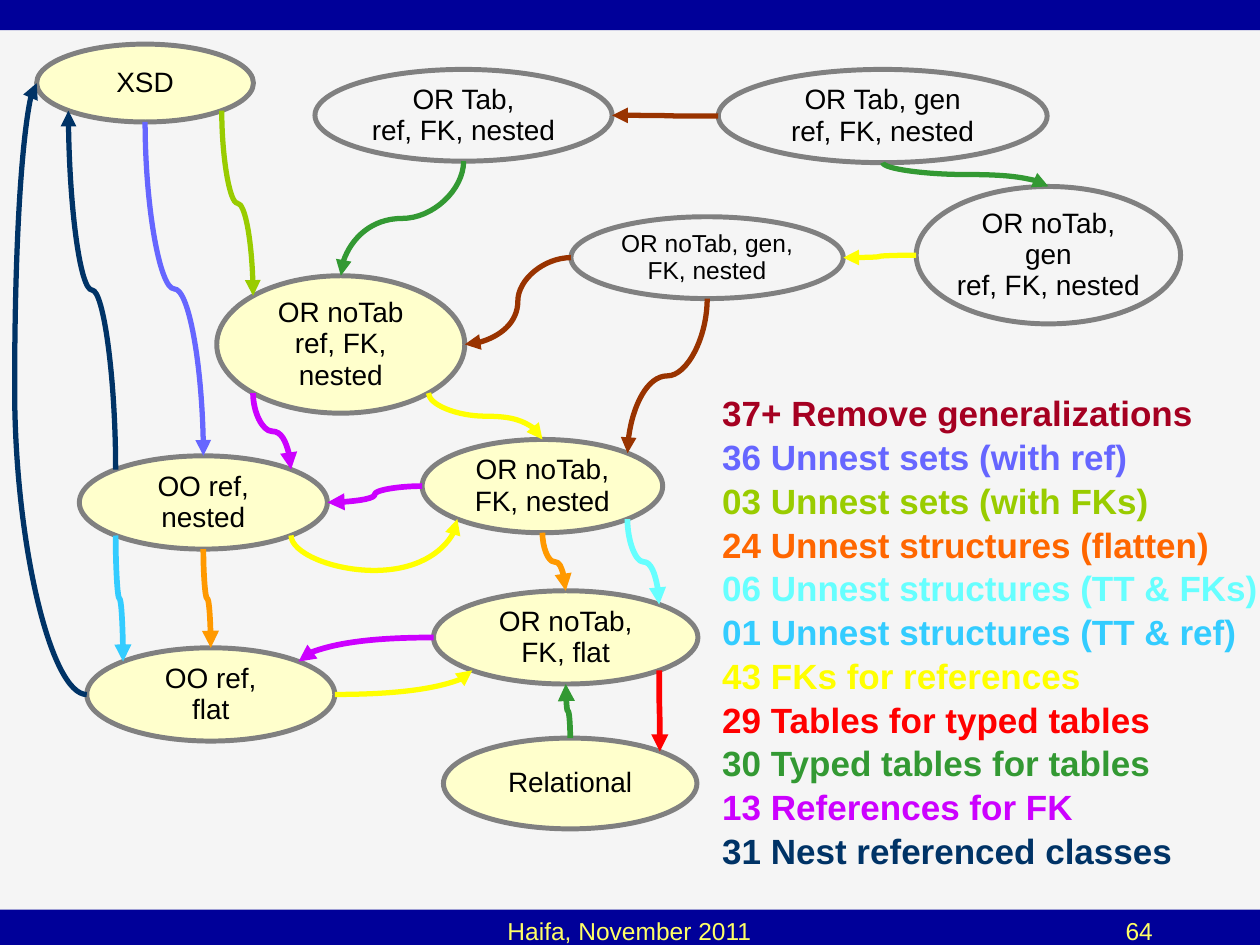
from math import cos, pi, sin

from lxml import etree
from pptx import Presentation
from pptx import util as u
from pptx.dml import color
from pptx.enum import shapes, text
from pptx.oxml import ns

CREAM, GREY, NAVY, PALE = "FFFFCC", "808080", "000099", "FFFF66"
BARS = [(0, 0, 25.4, 0.61), (0, 18.34, 25.4, 0.71)]
FOOTERS = [
    ("Haifa, November 2011", (5.49, 18.34, 14.4, 1.27), text.PP_ALIGN.CENTER),
    ("64", (20.09, 18.34, 3.4, 1.27), text.PP_ALIGN.RIGHT),
]
NODES = {
    "xsd": (["XSD"], (0.74, 0.89, 4.37, 1.57), CREAM, 16),
    "or_ref": (["OR noTab", "ref, FK, nested"], (4.37, 5.56, 5, 2.77), CREAM, 16),
    "relational": (["Relational"], (8.94, 14.88, 5.11, 1.83), CREAM, 16),
    "oo_nested": (["OO ref,", "nested"], (1.6, 9.19, 5, 1.88), CREAM, 16),
    "or_tab": (["OR Tab,", "ref, FK, nested"], (6.35, 1.4, 5.99, 1.85), None, 16),
    "oo_flat": (["OO ref,", "flat"], (1.75, 13.06, 5, 1.88), CREAM, 16),
    "or_nested": (["OR noTab,", "FK, nested"], (8.51, 8.86, 4.85, 1.88), CREAM, 16),
    "or_flat": (["OR noTab,", "FK, flat"], (8.74, 11.91, 5.33, 1.88), CREAM, 16),
    "tab_gen": (["OR Tab, gen", "ref, FK, nested"], (14.48, 1.4, 6.63, 1.88), None, 16),
    "notab_gen": (["OR noTab, gen", "ref, FK, nested"], (18.47, 3.76, 5.33, 2.77), None, 16),
    "fk_gen": (["OR noTab, gen, FK, nested"], (11.51, 4.37, 5.49, 1.65), None, 14),
}
SITES = ["top", "top left", "left", "bottom left", "bottom", "bottom right", "right", "top right"]
LINKS = [
    ("oo_nested", "top", "xsd", "bottom", "6666FF", 3, "head", None),
    ("oo_nested", "bottom", "oo_flat", "top", "FF9900", 3.25, "tail", None),
    ("or_ref", "top", "or_tab", "bottom", "339933", 3, "head", None),
    ("or_flat", "bottom right", "relational", "top right", "FF0000", 3.25, "tail", None),
    ("relational", "top", "or_flat", "bottom", "339933", 3.25, "tail", None),
    ("or_ref", "bottom left", "oo_nested", "top right", "CC00FF", 3.25, "tail", None),
    ("xsd", "bottom left", "oo_nested", "top left", "003366", 3, "head", None),
    ("or_ref", "bottom right", "or_nested", "top", "FFFF00", 3, "tail", None),
    ("or_nested", "bottom", "or_flat", "top", "FF9900", 3.25, "tail", None),
    ("oo_flat", "right", "or_flat", "bottom left", "FFFF00", 3, "tail", None),
    ("or_flat", "left", "oo_flat", "top right", "CC00FF", 3.25, "tail", None),
    ("or_nested", "left", "oo_nested", "right", "CC00FF", 3.25, "tail", None),
    ("oo_nested", "bottom right", "or_nested", "bottom left", "FFFF00", 3, "tail", -2.14),
    ("xsd", "left", "oo_flat", "left", "003366", 3, "head", -0.44),
    ("or_nested", "bottom right", "or_flat", "top right", "66FFFF", 3.25, "tail", None),
    ("oo_nested", "bottom left", "oo_flat", "top left", "33CCFF", 3.25, "tail", None),
    ("or_tab", "right", "tab_gen", "left", "993300", 3, "head", None),
    ("or_ref", "right", "fk_gen", "left", "993300", 3, "head", None),
    ("notab_gen", "top", "tab_gen", "bottom", "339933", 3, "head", None),
    ("notab_gen", "left", "fk_gen", "right", "FFFF00", 3, "tail", None),
    ("or_nested", "top right", "fk_gen", "bottom", "993300", 3, "head", None),
    ("or_ref", "top left", "xsd", "bottom right", "99CC00", 3, "head", None),
]
LEGEND_BOX = (13.69, 7.75, 12.67, 10.44)
LEGEND = [
    ("37+ Remove generalizations", "A50021"),
    ("36 Unnest sets (with ref)", "6666FF"),
    ("03 Unnest sets (with FKs)", "99CC00"),
    ("24 Unnest structures (flatten)", "FF6600"),
    ("06 Unnest structures (TT & FKs)", "66FFFF"),
    ("01 Unnest structures (TT & ref)", "33CCFF"),
    ("43 FKs for references", "FFFF00"),
    ("29 Tables for typed tables", "FF0000"),
    ("30 Typed tables for tables", "339933"),
    ("13 References for FK", "CC00FF"),
    ("31 Nest referenced classes", "003366"),
]


def rgb(value):
    return color.RGBColor.from_string(value)


def apply(obj, values):
    for key, value in values.items():
        setattr(obj, key, value)


def box(values):
    return [u.Cm(v) for v in values]


def margins(x, y):
    return {"margin_left": u.Cm(x), "margin_right": u.Cm(x),
            "margin_top": u.Cm(y), "margin_bottom": u.Cm(y), "word_wrap": True}


def write(tf, lines, size, bold=False, **fmt):
    for i, (line, tone) in enumerate(lines):
        p = tf.paragraphs[0] if i == 0 else tf.add_paragraph()
        apply(p, fmt)
        r = p.add_run()
        r.text = line
        apply(r.font, {"size": u.Pt(size), "name": "Arial", "bold": bold})
        r.font.color.rgb = rgb(tone)


def add_shape(s, kind, place, fill, line=None):
    sp = s.shapes.add_shape(kind, *box(place))
    sp.shadow.inherit = False
    if fill:
        sp.fill.solid()
        sp.fill.fore_color.rgb = rgb(fill)
    else:
        sp.fill.background()
    if line:
        sp.line.color.rgb = rgb(line)
        sp.line.width = u.Pt(2.83)
    else:
        sp.line.fill.background()
    return sp


def site_point(node, site):
    x, y, w, h = NODES[node][1]
    angle = SITES.index(site) * pi / 4
    return x + w / 2 * (1 - sin(angle)), y + h / 2 * (1 - cos(angle))


def add_link(s, ovals, start, site1, end, site2, tone, width, arrow, adj):
    (x1, y1), (x2, y2) = site_point(start, site1), site_point(end, site2)
    dx, dy = x2 - x1, y2 - y1
    cx, cy = (x1 + x2) / 2, (y1 + y2) / 2
    sideways = ("left", "right")
    if site1 in sideways:
        turned = site1 == "left"
        rot, flip_h, flip_v = 180 * turned, (dx < 0) != turned, (dy < 0) != turned
        a, b = abs(dx) / 2, abs(dy) / 2
    else:
        rot = 270 if (dx > 0) == (dy > 0) else 90
        flip_h, flip_v = dx > 0, dy < 0
        a, b = abs(dy) / 2, abs(dx) / 2
    a, b = -a if flip_h else a, -b if flip_v else b
    c = s.shapes.add_connector(shapes.MSO_CONNECTOR.CURVE, *box((cx - a, cy - b, cx + a, cy + b)))
    c.line.color.rgb = rgb(tone)
    c.line.width = u.Pt(width)
    pr = c._element.spPr
    pr.find(ns.qn("a:xfrm")).set("rot", str(rot * 60000))
    geom = pr.find(ns.qn("a:prstGeom"))
    if site1 in sideways and site2 not in sideways:
        geom.set("prst", "curvedConnector2")
    if adj is not None:
        etree.SubElement(geom.find(ns.qn("a:avLst")), ns.qn("a:gd"),
                         name="adj1", fmla=f"val {round(adj * 100000)}")
    etree.SubElement(pr.find(ns.qn("a:ln")), ns.qn(f"a:{arrow}End"), type="triangle")
    etree.SubElement(pr, ns.qn("a:effectLst"))
    glue = c._element.nvCxnSpPr.cNvCxnSpPr
    for tag, node, site in (("a:stCxn", start, site1), ("a:endCxn", end, site2)):
        etree.SubElement(glue, ns.qn(tag), id=str(ovals[node].shape_id), idx=str(SITES.index(site)))


def main():
    prs = Presentation()
    apply(prs, {"slide_width": u.Cm(25.4), "slide_height": u.Cm(19.05)})
    s = prs.slides.add_slide(prs.slide_layouts[6])
    s.background.fill.solid()
    s.background.fill.fore_color.rgb = rgb("F5F5F5")
    for place in BARS:
        add_shape(s, shapes.MSO_SHAPE.RECTANGLE, place, NAVY)
    for words, place, align in FOOTERS:
        tf = s.shapes.add_textbox(*box(place)).text_frame
        tf.word_wrap = True
        write(tf, [(words, PALE)], 14, alignment=align)

    ovals = {}
    for name, (lines, place, fill, size) in NODES.items():
        sp = ovals[name] = add_shape(s, shapes.MSO_SHAPE.OVAL, place, fill, GREY)
        apply(sp.text_frame, {**margins(0, 0), "vertical_anchor": text.MSO_ANCHOR.MIDDLE})
        write(sp.text_frame, [(line, "000000") for line in lines], size,
              alignment=text.PP_ALIGN.CENTER, line_spacing=0.93)
    for link in LINKS:
        add_link(s, ovals, *link)

    tf = s.shapes.add_textbox(*box(LEGEND_BOX)).text_frame
    apply(tf, margins(0.05, 0.15))
    write(tf, LEGEND, 20, bold=True)
    for i, p in enumerate(tf.paragraphs):
        p.space_before = u.Pt(1 if i else 0)
        pr = p._p.get_or_add_pPr()
        pr.set("marL", str(u.Cm(1.63)))
        pr.set("indent", str(u.Cm(-0.81)))
    prs.save("out.pptx")


if __name__ == "__main__":
    main()
